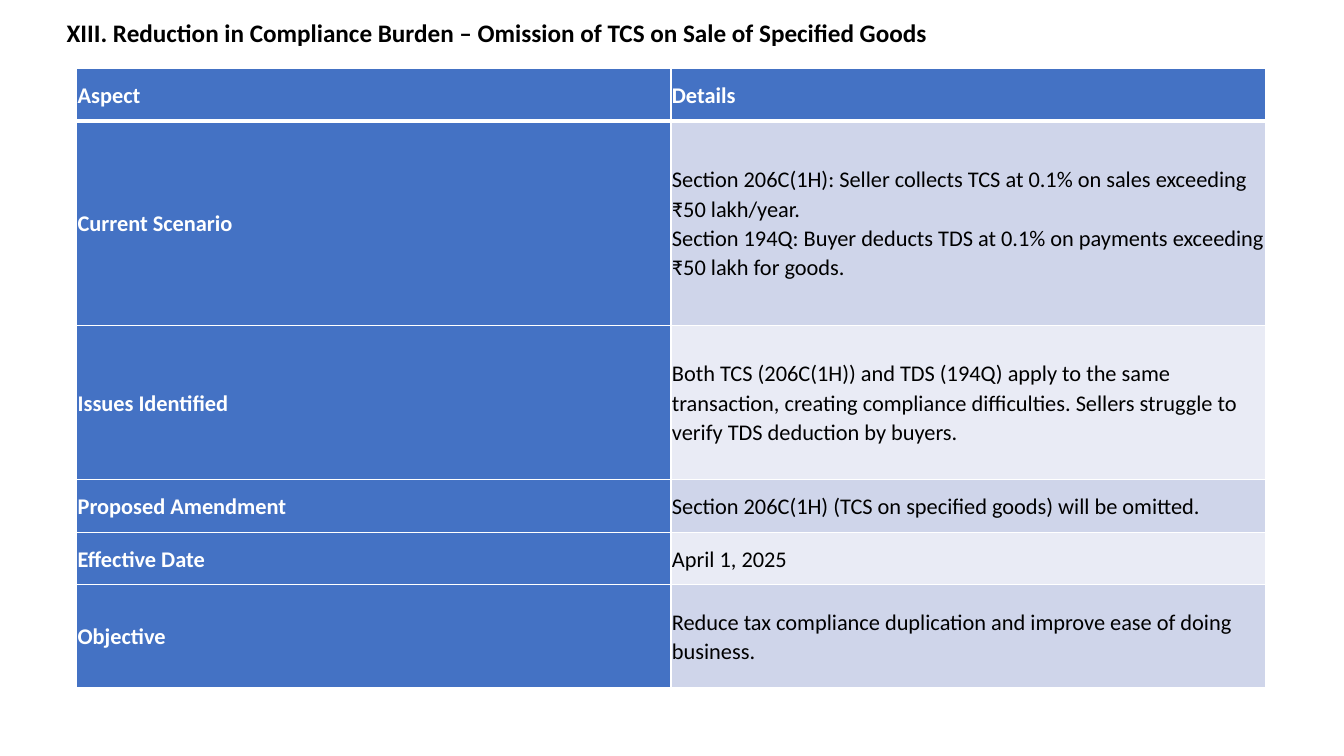
"""Build the slide on the omission of TCS on sale of specified goods."""
from dataclasses import dataclass

import pptx
import pptx.dml.color
import pptx.enum.text
import pptx.oxml
import pptx.oxml.ns
import pptx.util

PX = 9525
BLACK = pptx.dml.color.RGBColor(0x00, 0x00, 0x00)
WHITE = pptx.dml.color.RGBColor(0xFF, 0xFF, 0xFF)
BLUE = pptx.dml.color.RGBColor(0x44, 0x72, 0xC4)
BAND_DARK = pptx.dml.color.RGBColor(0xCF, 0xD5, 0xEA)
BAND_LIGHT = pptx.dml.color.RGBColor(0xE9, 0xEB, 0xF5)

TITLE = "XIII. Reduction in Compliance Burden – Omission of TCS on Sale of Specified Goods"


@dataclass(frozen=True)
class AspectRow:
    aspect: str
    details: str
    height: int


ROWS = [
    AspectRow("Aspect", "Details", 50),
    AspectRow(
        "Current Scenario",
        "Section 206C(1H): Seller collects TCS at 0.1% on sales exceeding ₹50 lakh/year.\n"
        "Section 194Q: Buyer deducts TDS at 0.1% on payments exceeding ₹50 lakh for goods.",
        195,
    ),
    AspectRow(
        "Issues Identified",
        "Both TCS (206C(1H)) and TDS (194Q) apply to the same transaction, creating compliance "
        "difficulties. Sellers struggle to verify TDS deduction by buyers.",
        147,
    ),
    AspectRow("Proposed Amendment", "Section 206C(1H) (TCS on specified goods) will be omitted.", 50),
    AspectRow("Effective Date", "April 1, 2025", 50),
    AspectRow("Objective", "Reduce tax compliance duplication and improve ease of doing business.", 98),
]


def px(n: int) -> pptx.util.Emu:
    """Turn px into EMU."""
    return pptx.util.Emu(n * PX)


def write(tf, text: str, size: int, color: pptx.dml.color.RGBColor, bold: bool) -> None:
    """Write one formatted paragraph into a text frame."""
    p = tf.paragraphs[0]
    p.text = text
    p.line_spacing = 1.07
    p.space_after = pptx.util.Pt(8)
    p.font.name = "Calibri"
    p.font.size = pptx.util.Pt(size)
    p.font.bold = bold
    p.font.color.rgb = color


def add_borders(cell, widths: dict[str, int]) -> None:
    """Give a cell white borders with widths in points."""
    tc_pr = cell._tc.get_or_add_tcPr()
    for side, width in widths.items():
        tc_pr.append(pptx.oxml.parse_xml(
            f'<a:ln{side} {pptx.oxml.ns.nsdecls("a")} w="{pptx.util.Pt(width)}">'
            f'<a:solidFill><a:srgbClr val="{WHITE}"/></a:solidFill></a:ln{side}>'
        ))


def fill_cell(cell, text: str, row: int, col: int) -> None:
    """Style a cell by its place in the table and write its text."""
    heading = row == 0 or col == 0
    cell.margin_left = cell.margin_right = px(1)
    cell.margin_top = cell.margin_bottom = px(1)
    cell.vertical_anchor = pptx.enum.text.MSO_ANCHOR.MIDDLE
    add_borders(cell, {"L": 1, "R": 1, "T": 3 if row == 1 else 1, "B": 3 if row == 0 else 1})
    cell.fill.solid()
    cell.fill.fore_color.rgb = BLUE if heading else BAND_DARK if row % 2 else BAND_LIGHT
    write(cell.text_frame, text, 16, WHITE if heading else BLACK, heading)


def add_title(s) -> None:
    """Add the slide title."""
    tf = s.shapes.add_textbox(px(54), px(10), px(1151), px(39)).text_frame
    tf.word_wrap = True
    write(tf, TITLE, 18, BLACK, True)


def add_aspects(s) -> None:
    """Add the table of aspects and details."""
    height = sum(row.height for row in ROWS)
    table = s.shapes.add_table(len(ROWS), 2, px(73), px(65), px(1132), px(height)).table
    for i, row in enumerate(ROWS):
        table.rows[i].height = px(row.height)
        for j, text in enumerate((row.aspect, row.details)):
            fill_cell(table.cell(i, j), text, i, j)


def main() -> None:
    """Build and save the presentation."""
    prs = pptx.Presentation()
    prs.slide_width, prs.slide_height = px(1280), px(720)
    s = prs.slides.add_slide(prs.slide_layouts[6])
    add_title(s)
    add_aspects(s)
    prs.save("out.pptx")


if __name__ == "__main__":
    main()
